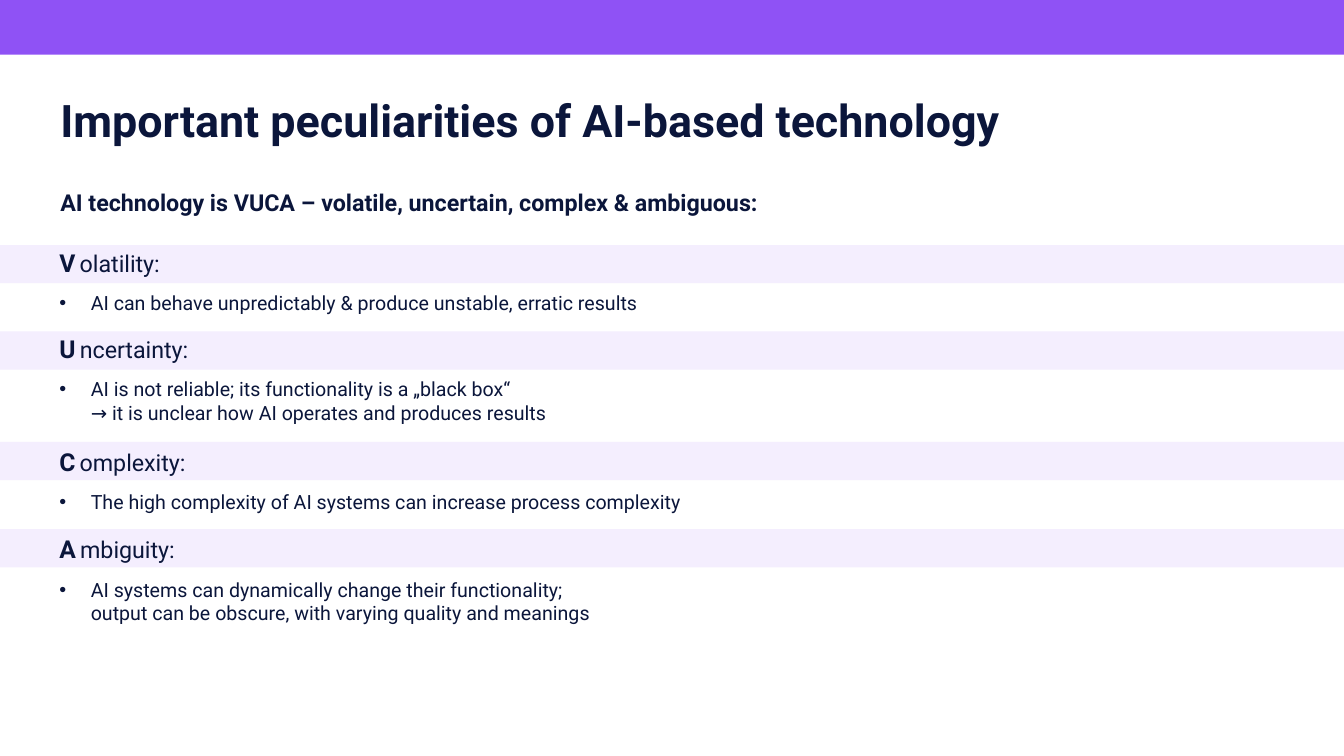
from copy import deepcopy

from lxml import etree
from pptx import Presentation
from pptx.dml.color import RGBColor
from pptx.enum import shapes, text
from pptx.oxml import ns
from pptx.util import Pt

PURPLE = RGBColor(0x8F, 0x52, 0xF5)
LILAC = RGBColor(0xF4, 0xEE, 0xFE)
NAVY = RGBColor(0x0B, 0x16, 0x3B)

TITLE = {"size": Pt(32), "bold": True}
LEAD = {"size": Pt(16.6), "bold": True}
INITIAL = {"size": Pt(17.6), "bold": True}
REST = {"size": Pt(16.6), "bold": False}
BODY = {"size": Pt(14), "bold": False}

prs = Presentation()
prs.slide_width, prs.slide_height = Pt(960), Pt(540)
s = prs.slides.add_slide(prs.slide_layouts[6])


def add_band(top, height, color):
    sp = s.shapes.add_shape(shapes.MSO_SHAPE.RECTANGLE, 0, Pt(top), prs.slide_width, Pt(height))
    sp.shadow.inherit = False
    sp.fill.solid()
    sp.fill.fore_color.rgb = color
    sp.line.fill.background()


def add_text(box, runs, anchor=text.MSO_ANCHOR.MIDDLE, spacing=0.9):
    tf = s.shapes.add_textbox(*map(Pt, box)).text_frame
    tf.word_wrap = True
    tf.vertical_anchor = anchor
    p = tf.paragraphs[0]
    p.line_spacing = spacing
    for words, fmt in runs:
        r = p.add_run()
        r.text = words
        r.font.name = "Roboto"
        r.font.color.rgb = NAVY
        for name, value in fmt.items():
            setattr(r.font, name, value)
    return p


# Header bar, title and lead line
add_band(-1.5, 40.5, PURPLE)
add_text((36, 62.6, 864, 65.5), [("Important peculiarities of AI-based technology", TITLE)],
         text.MSO_ANCHOR.TOP, 1.0)
add_text((36, 129.5, 907, 32.5),
         [("AI technology is VUCA – volatile, uncertain, complex & ambiguous:", LEAD)])

# VUCA sections: band top, heading top, heading, bullet lines
sections = [
    (175, 173.5, "Volatility:",
     ["AI can behave unpredictably & produce unstable, erratic results"]),
    (236.7, 235, "Uncertainty:",
     ["AI is not reliable; its functionality is a „black box“",
      "→ it is unclear how AI operates and produces results"]),
    (315.7, 315.7, "Complexity:",
     ["The high complexity of AI systems can increase process complexity"]),
    (378, 378, "Ambiguity:",
     ["AI systems can dynamically change their functionality;",
      "output can be obscure, with varying quality and meanings"]),
]
for band_top, head_top, heading, lines in sections:
    add_band(band_top, 27.3, LILAC)
    p = add_text((35.3, head_top, 907, 31), [(heading[0], INITIAL), (heading[1:], REST)])
    p.runs[0].font._element.set("spc", "300")

    p = add_text((35.3, head_top + 31, 870, 14 + 16.5 * len(lines)),
                 [(line, BODY) for line in lines], text.MSO_ANCHOR.TOP, 1.0)
    pPr = p._p.get_or_add_pPr()
    pPr.set("marL", str(Pt(22.5)))
    pPr.set("indent", str(-Pt(22.5)))
    etree.SubElement(pPr, ns.qn("a:buFont"), typeface="Arial")
    etree.SubElement(pPr, ns.qn("a:buChar"), char="•")
    # Line breaks in the size of the text
    for r in p.runs[1:]:
        br = etree.Element(ns.qn("a:br"))
        br.append(deepcopy(r.font._element))
        r._r.addprevious(br)

prs.save("out.pptx")
